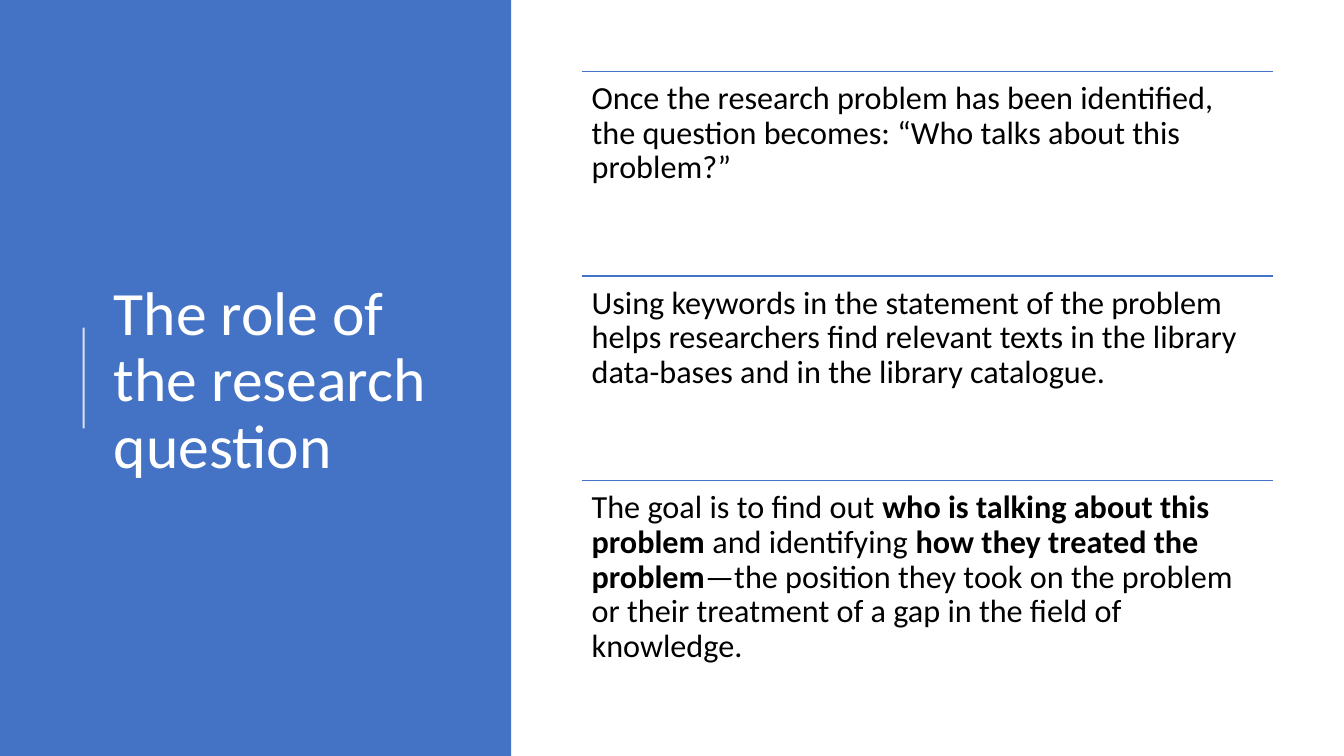
from lxml import etree
from pptx import Presentation
from pptx import util as u
from pptx.dml.color import RGBColor
from pptx.enum import shapes, text
from pptx.oxml.ns import qn

BLUE = RGBColor(0x44, 0x72, 0xC4)
WHITE = RGBColor(0xFF, 0xFF, 0xFF)
BLACK = RGBColor(0, 0, 0)

LEFT, TOP, WIDTH, STEP = 5.77, 0.71, 6.86, 2.03
POINTS = [
    [("Once the research problem has been identified, the question becomes: "
      "“Who talks about this problem?”", False)],
    [("Using keywords in the statement of the problem helps researchers find "
      "relevant texts in the library data-bases and in the library catalogue.", False)],
    [("The goal is to find out ", False),
     ("who is talking about this problem ", True),
     ("and identifying ", False),
     ("how they treated the problem", True),
     ("—the position they took on the problem or their treatment of a gap "
      "in the field of knowledge.", False)],
]


class Deck:
    """Hold the style and the current slide, and draw each kind of element."""

    font = "Calibri"

    def __init__(self):
        self.show = Presentation()
        self.show.slide_width = u.Inches(13.33)
        self.show.slide_height = u.Inches(7.5)
        self.slide = self.show.slides.add_slide(self.show.slide_layouts[5])
        self.items = self.slide.shapes

    def style(self, para, size, color):
        para.alignment = text.PP_ALIGN.LEFT
        para.line_spacing = 0.9
        para.font.name = self.font
        para.font.size = u.Pt(size)
        para.font.color.rgb = color

    def panel(self, box, color):
        shape = self.items.add_shape(
            shapes.MSO_SHAPE.RECTANGLE, *map(u.Inches, box))
        shape.shadow.inherit = False
        shape.fill.solid()
        shape.fill.fore_color.rgb = color
        shape.line.fill.background()

    def title(self, words, box):
        shape = self.items.title
        shape.left, shape.top, shape.width, shape.height = map(u.Inches, box)
        frame = shape.text_frame
        frame.text = words
        frame.word_wrap = True
        frame.auto_size = text.MSO_AUTO_SIZE.NONE
        frame.vertical_anchor = text.MSO_ANCHOR.MIDDLE
        self.style(frame.paragraphs[0], 44, WHITE)
        shape.element.getparent().append(shape.element)

    def line(self, ends, color, width, alpha=100):
        rule = self.items.add_connector(
            shapes.MSO_CONNECTOR.STRAIGHT, *map(u.Inches, ends))
        rule.line.color.rgb = color
        rule.line.width = u.Pt(width)
        props = rule.element.spPr
        etree.SubElement(props, qn("a:effectLst"))
        if alpha < 100:
            tint = props.find(".//" + qn("a:srgbClr"))
            etree.SubElement(tint, qn("a:alpha"), val=str(alpha * 1000))

    def note(self, runs, box):
        frame = self.items.add_textbox(*map(u.Inches, box)).text_frame
        frame.word_wrap = True
        frame.margin_top = frame.margin_bottom = u.Inches(0.1)
        para = frame.paragraphs[0]
        self.style(para, 23, BLACK)
        for words, bold in runs:
            run = para.add_run()
            run.text = words
            if bold:
                run.font.bold = True


def main():
    deck = Deck()
    deck.panel((0, 0, 5.07, 7.5), BLUE)
    deck.line((0.83, 4.25, 0.83, 3.25), WHITE, 1.5, alpha=80)
    deck.title("The role of the research question", (1.03, 0.78, 3.69, 6.02))
    for row, runs in enumerate(POINTS):
        top = TOP + row * STEP
        deck.line((LEFT, top, LEFT + WIDTH, top), BLUE, 1)
        deck.note(runs, (LEFT, top, WIDTH, STEP))
    deck.show.save("out.pptx")


if __name__ == "__main__":
    main()
